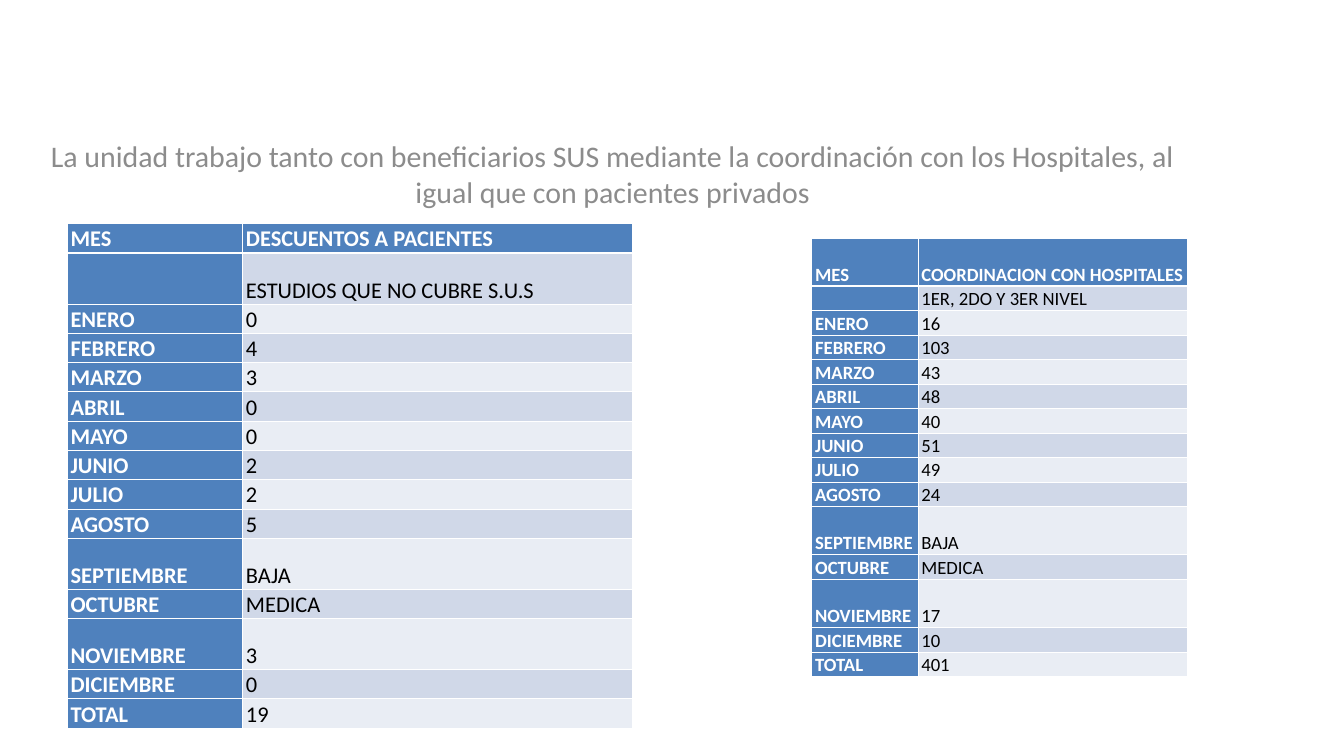
from lxml import etree
from pptx import Presentation
from pptx.dml.color import RGBColor
from pptx.enum.text import MSO_ANCHOR, MSO_AUTO_SIZE, PP_ALIGN
from pptx.oxml.ns import qn
from pptx.util import Inches, Pt

BOTTOM, TOP = MSO_ANCHOR.BOTTOM, MSO_ANCHOR.TOP
CENTER, JUSTIFY = PP_ALIGN.CENTER, PP_ALIGN.JUSTIFY
NO_FIT = MSO_AUTO_SIZE.NONE

FONT = "Calibri"
COLORS = {
    "head": "4F81BD",
    "dark": "D0D8E8",
    "light": "E9EDF4",
    "white": "FFFFFF",
    "black": "000000",
    "gray": "8C8C8C",
}

INTRO = ("La unidad trabajo tanto con beneficiarios SUS mediante la coordinación "
         "con los Hospitales, al igual que con pacientes privados")
MONTHS = ["MES", "", "ENERO", "FEBRERO", "MARZO", "ABRIL", "MAYO", "JUNIO",
          "JULIO", "AGOSTO", "SEPTIEMBRE", "OCTUBRE", "NOVIEMBRE",
          "DICIEMBRE", "TOTAL"]
DISCOUNTS = ["DESCUENTOS A PACIENTES", "ESTUDIOS QUE NO CUBRE S.U.S", "0", "4",
             "3", "0", "0", "2", "2", "5", "BAJA", "MEDICA", "3", "0", "19"]
VISITS = ["COORDINACION CON HOSPITALES", "1ER, 2DO Y 3ER NIVEL", "16", "103",
          "43", "48", "40", "51", "49", "24", "BAJA", "MEDICA", "17", "10", "401"]


def rgb(name):
    return RGBColor.from_string(COLORS[name])


def add_run(para, text, size, color, bold=False):
    run = para.add_run()
    run.text = text
    font = run.font
    font.name, font.size, font.bold = FONT, Pt(size), bold
    font.color.rgb = rgb(color)


def set_borders(cell, row):
    """White rules, with a thick one under the header row."""
    props = cell._tc.get_or_add_tcPr()
    thick = {0: "lnB", 1: "lnT"}.get(row)
    for side in ("lnL", "lnR", "lnT", "lnB"):
        width = Pt(3 if side == thick else 1)
        line = etree.SubElement(props, qn(f"a:{side}"), w=str(width))
        fill = etree.SubElement(line, qn("a:solidFill"))
        etree.SubElement(fill, qn("a:srgbClr"), val=COLORS["white"])


def fill_cell(cell, text, size, row, head):
    cell.vertical_anchor = BOTTOM
    cell.margin_left, cell.margin_right = Inches(0.05), Inches(0.04)
    cell.margin_top = cell.margin_bottom = 0
    set_borders(cell, row)
    band = "dark" if row % 2 else "light"
    cell.fill.solid()
    cell.fill.fore_color.rgb = rgb("head" if head else band)
    if text:
        para = cell.text_frame.paragraphs[0]
        para.alignment = JUSTIFY
        para.line_spacing = 1.07
        para.space_after = Pt(8)
        add_run(para, text, size, "white" if head else "black", head)


def add_grid(slide, left, top, widths, height, tall, values, size):
    """Month table; the rows listed in tall are twice the base height."""
    heights = [height * (2 if i in tall else 1) for i in range(len(MONTHS))]
    frame = slide.shapes.add_table(
        len(MONTHS), 2, Inches(left), Inches(top),
        Inches(sum(widths)), Inches(sum(heights)))
    table = frame.table
    for col, width in zip(table.columns, widths):
        col.width = Inches(width)
    for row, high in zip(table.rows, heights):
        row.height = Inches(high)
    for i, pair in enumerate(zip(MONTHS, values)):
        for j, text in enumerate(pair):
            fill_cell(table.cell(i, j), text, size, i, i == 0 or j == 0)


def add_intro(slide):
    box = slide.placeholders[1]
    box.left, box.top = Inches(0.58), Inches(2)
    box.width, box.height = Inches(17.08), Inches(1.29)
    frame = box.text_frame
    frame.word_wrap = True
    frame.auto_size = NO_FIT
    frame.vertical_anchor = TOP
    para = frame.paragraphs[0]
    para.alignment = CENTER
    para.space_before = Pt(0)
    add_run(para, INTRO, 32, "gray")


def main():
    prs = Presentation()
    prs.slide_width, prs.slide_height = Inches(20), Inches(11.25)
    # The slide has a subtitle only
    slide = prs.slides.add_slide(prs.slide_layouts[0])
    title = slide.shapes.title.element
    title.getparent().remove(title)

    # Discounts on the left, hospitals on the right
    add_grid(slide, 1, 3.33, (2.61, 5.8), 0.38, (1, 10, 12), DISCOUNTS, 24)
    add_intro(slide)
    add_grid(slide, 12.08, 3.54, (1.58, 4.01), 0.36, (0, 10, 12), VISITS, 20)
    prs.save("out.pptx")


if __name__ == "__main__":
    main()
